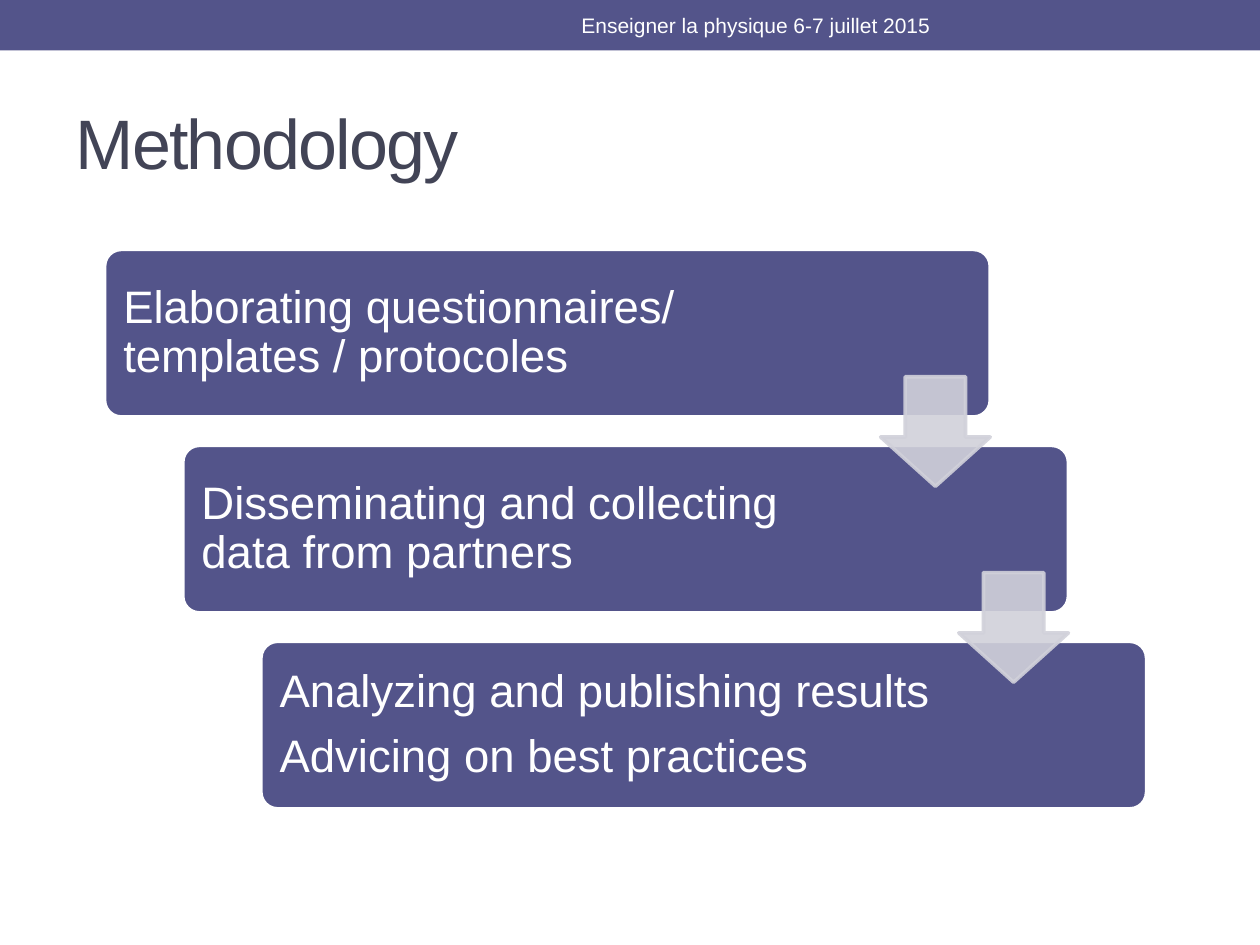
from dataclasses import dataclass

import pptx
import pptx.dml.color
import pptx.enum.shapes
import pptx.enum.text
import pptx.oxml
import pptx.oxml.ns
import pptx.util
from pptx.util import Inches

SHAPES = pptx.enum.shapes.MSO_SHAPE
ALIGN = pptx.enum.text.PP_ALIGN


@dataclass(frozen=True)
class Theme:
    """Colours, font and type sizes of the slide."""
    accent: str = "53548A"
    heading: str = "424456"
    arrow: str = "D1D1DA"
    light: str = "FFFFFF"
    font: str = "Arial"
    title_size: int = 40
    step_size: int = 26
    footer_size: int = 12
    outline: float = 2.08


THEME = Theme()
STEPS = [
    "Elaborating questionnaires/ templates / protocoles",
    "Disseminating and collecting data from partners",
    "Analyzing and publishing results\nAdvicing on best practices",
]


def rgb(value):
    """Return the colour for a hex value."""
    return pptx.dml.color.RGBColor.from_string(value)


def write_text(shape, text, size, color, align):
    """Write wrapped, vertically centred text into a shape."""
    frame = shape.text_frame
    frame.text = text
    frame.word_wrap = True
    frame.auto_size = pptx.enum.text.MSO_AUTO_SIZE.NONE
    frame.vertical_anchor = pptx.enum.text.MSO_ANCHOR.MIDDLE
    for paragraph in frame.paragraphs:
        paragraph.alignment = align
        for run in paragraph.runs:
            run.font.name = THEME.font
            run.font.size = pptx.util.Pt(size)
            run.font.color.rgb = rgb(color)


def add_filled_shape(slide, kind, box, fill, line=None):
    """Add a flat preset shape with an optional outline."""
    shape = slide.shapes.add_shape(kind, *map(Inches, box))
    shape.shadow.inherit = False
    shape.fill.solid()
    shape.fill.fore_color.rgb = rgb(fill)
    if line:
        shape.line.color.rgb = rgb(line)
        shape.line.width = pptx.util.Pt(THEME.outline)
    else:
        shape.line.fill.background()
    return shape


def add_header(slide, box):
    """Add the top band with the event name."""
    left, top, width, height = box
    add_filled_shape(slide, SHAPES.RECTANGLE, box, THEME.accent)
    label_box = (left + 0.375 * width, top + 0.02, 0.45 * width, height - 0.04)
    label = slide.shapes.add_textbox(*map(Inches, label_box))
    write_text(label, "Enseigner la physique 6-7 juillet 2015",
               THEME.footer_size, THEME.light, ALIGN.CENTER)


def set_title(slide, box):
    """Place and format the title placeholder."""
    title = slide.shapes.title
    title.left, title.top, title.width, title.height = map(Inches, box)
    write_text(title, "Methodology", THEME.title_size, THEME.heading, ALIGN.LEFT)
    for properties in title.element.iter(pptx.oxml.ns.qn("a:rPr")):
        properties.set("spc", "-100")


def add_step(slide, box, text):
    """Add one rounded step, keeping room for an arrow at its right."""
    shape = add_filled_shape(slide, SHAPES.ROUNDED_RECTANGLE, box,
                             THEME.accent, THEME.light)
    shape.adjustments[0] = 0.1
    write_text(shape, text, THEME.step_size, THEME.light, ALIGN.LEFT)
    frame = shape.text_frame
    frame.margin_left = frame.margin_top = frame.margin_bottom = Inches(0.11)
    frame.margin_right = Inches(1.47)
    for paragraph in frame.paragraphs:
        paragraph.line_spacing = 0.9
        paragraph.space_after = pptx.util.Pt(0.35 * THEME.step_size)


def add_arrow(slide, box):
    """Add a slightly transparent down arrow."""
    arrow = add_filled_shape(slide, SHAPES.DOWN_ARROW, box, THEME.arrow, THEME.arrow)
    arrow.adjustments[0] = 0.55
    arrow.adjustments[1] = 0.45
    for color in arrow.element.spPr.iter(pptx.oxml.ns.qn("a:srgbClr")):
        alpha = color.makeelement(pptx.oxml.ns.qn("a:alpha"), {"val": "90000"})
        color.append(alpha)


def add_staircase(slide, box, steps):
    """Add descending steps joined by arrows within a box."""
    left, top, width, height = box
    step_width, step_height, arrow_size = 0.85 * width, 1.33, 0.87
    gaps = len(steps) - 1
    shift, drop = (width - step_width) / gaps, (height - step_height) / gaps
    corners = [(left + i * shift, top + i * drop) for i in range(len(steps))]
    for (x, y), text in zip(corners, steps):
        add_step(slide, (x, y, step_width, step_height), text)
    for x, y in corners[:-1]:
        add_arrow(slide, (x + step_width - arrow_size, y + 1.01,
                          arrow_size, arrow_size))


def main():
    """Build and save the presentation."""
    presentation = pptx.Presentation()
    presentation.slide_width, presentation.slide_height = Inches(10), Inches(7.5)
    slide = presentation.slides.add_slide(presentation.slide_layouts[5])
    add_header(slide, (0, 0, 10, 0.4))
    set_title(slide, (0.5, 0.58, 9, 1.08))
    add_staircase(slide, (0.83, 1.98, 8.27, 4.44), STEPS)
    presentation.save("out.pptx")


if __name__ == "__main__":
    main()
